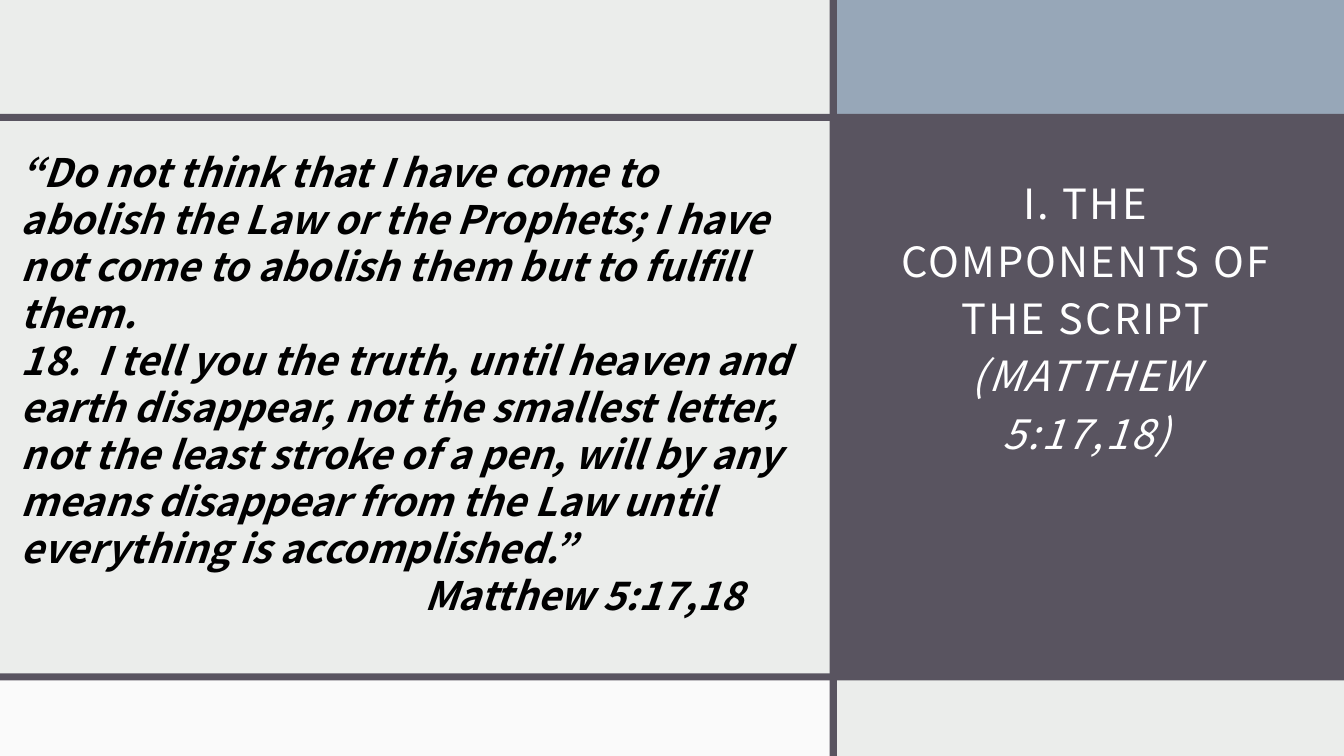
"""Build the scripture slide with its framed panels, verse and title."""
from pptx import Presentation
from pptx.dml.color import RGBColor
from pptx.enum.shapes import MSO_SHAPE
from pptx.enum.text import MSO_ANCHOR, MSO_AUTO_SIZE, PP_ALIGN
from pptx.util import Inches, Pt

WIDTH, HEIGHT, BAR = 13.33, 7.5, 0.07
FRAME, PALE, BLUE, NEAR_WHITE = "595460", "EBEDEB", "97A7B8", "FAFAFA"
VERSES = (
    "“Do not think that I have come to abolish the Law or the Prophets; "
    "I have not come to abolish them but to fulfill them.",
    "18.  I tell you the truth, until heaven and earth disappear, not the "
    "smallest letter, not the least stroke of a pen, will by any means "
    "disappear from the Law until everything is accomplished.”",
)


def color(value):
    return RGBColor.from_string(value)


class SlideBuilder:
    font = "Noto Sans CJK JP"

    def __init__(self, slide):
        self.slide = slide

    def background(self, fill):
        background = self.slide.background.fill
        background.solid()
        background.fore_color.rgb = color(fill)

    def panel(self, left, top, width, height, fill):
        shape = self.slide.shapes.add_shape(
            MSO_SHAPE.RECTANGLE, Inches(left), Inches(top), Inches(width), Inches(height))
        shape.shadow.inherit = False
        shape.fill.solid()
        shape.fill.fore_color.rgb = color(fill)
        shape.line.fill.background()

    def text_box(self, left, top, width, height):
        shape = self.slide.shapes.add_textbox(
            Inches(left), Inches(top), Inches(width), Inches(height))
        frame = shape.text_frame
        frame.word_wrap = True
        return frame

    def run(self, paragraph, text, size, fill, bold=False, italic=False, spacing=0):
        run = paragraph.add_run()
        run.text = text
        font = run.font
        font.name, font.size = self.font, Pt(size)
        font.bold, font.italic = bold, italic
        font.color.rgb = color(fill)
        if spacing:
            font._element.set("spc", str(int(spacing * 100)))

    def title(self, heading, reference):
        frame = self.text_box(8.72, 1.87, 4.11, 2.77)
        frame.vertical_anchor = MSO_ANCHOR.BOTTOM
        frame.margin_left = frame.margin_right = frame.margin_top = Inches(0.12)
        frame.margin_bottom = Inches(0.1)
        paragraph = frame.paragraphs[0]
        paragraph.alignment = PP_ALIGN.CENTER
        paragraph.line_spacing = 1.15
        self.run(paragraph, heading, 29.7, "FFFFFF", spacing=1.5)
        self.run(paragraph, reference, 29.7, "FFFFFF", italic=True, spacing=1.5)

    def quotation(self, verses, reference):
        frame = self.text_box(0.11, 1.42, 7.97, 5.28)
        frame.auto_size = MSO_AUTO_SIZE.SHAPE_TO_FIT_TEXT
        for index, text in enumerate((*verses, reference)):
            paragraph = frame.add_paragraph() if index else frame.paragraphs[0]
            self.run(paragraph, text, 28, "000000", bold=True, italic=True)
        properties = paragraph._p.get_or_add_pPr()
        properties.set("marL", str(Inches(4)))
        properties.set("indent", "0")


def main():
    presentation = Presentation()
    presentation.slide_width, presentation.slide_height = Inches(WIDTH), Inches(HEIGHT)
    builder = SlideBuilder(presentation.slides.add_slide(presentation.slide_layouts[6]))
    builder.background(PALE)
    builder.panel(8.26, 0, WIDTH - 8.26, 1.16, BLUE)
    builder.panel(0, 1.13, WIDTH, BAR, FRAME)
    builder.panel(8.3, 1.2, WIDTH - 8.3, 5.49, FRAME)
    builder.title("I. THE COMPONENTS OF THE SCRIPT ", "(MATTHEW 5:17,18)")
    builder.panel(0, 6.72, 8.24, HEIGHT - 6.72, NEAR_WHITE)
    builder.panel(0, 6.68, WIDTH, BAR, FRAME)
    builder.panel(8.23, 0, BAR, HEIGHT, FRAME)
    builder.quotation(VERSES, "Matthew 5:17,18")
    presentation.save("out.pptx")


if __name__ == "__main__":
    main()
